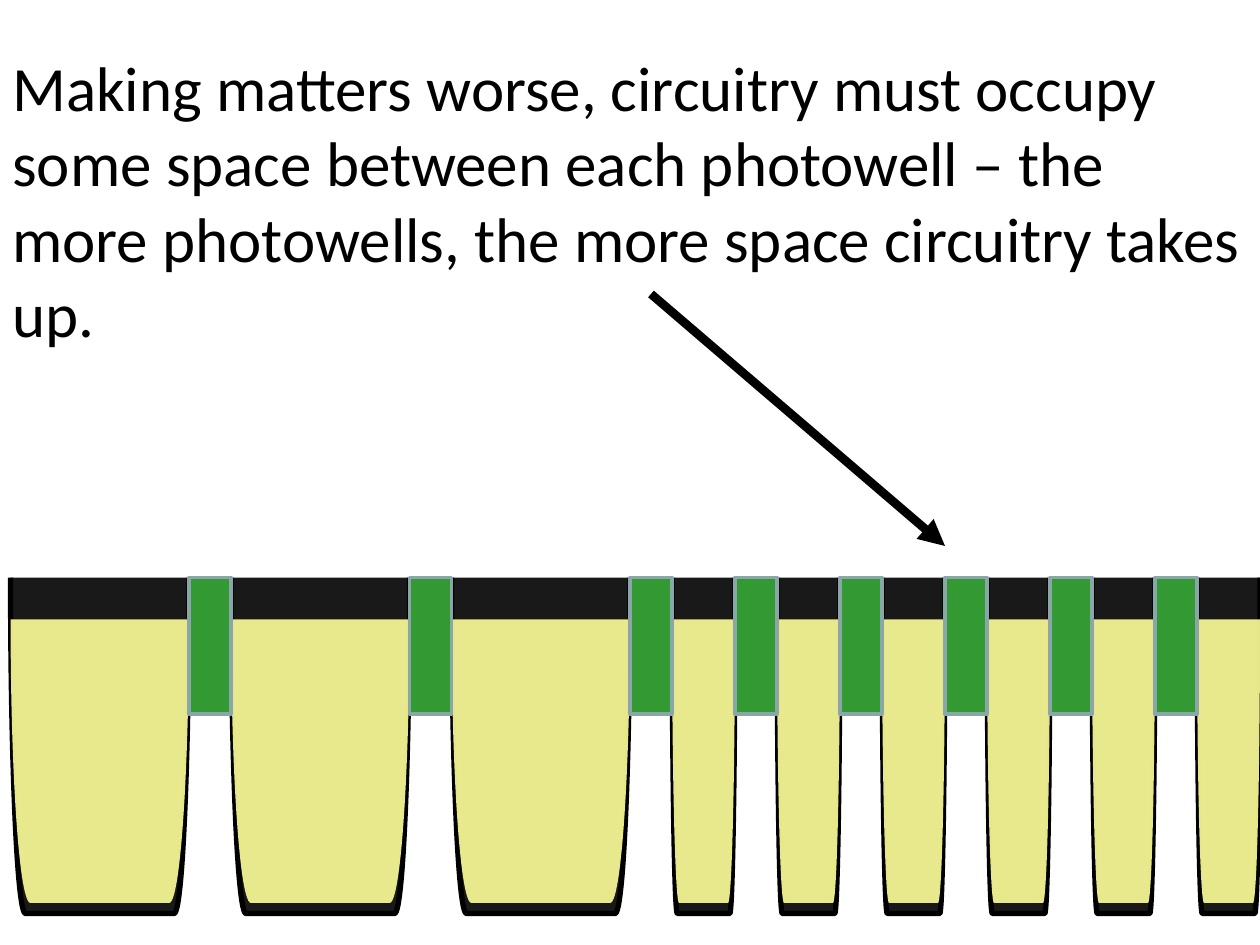
"""Build the slide on circuitry between photowells."""
from lxml.etree import SubElement as Sub
from pptx import Presentation
from pptx.dml.color import RGBColor
from pptx.enum.shapes import MSO_CONNECTOR as Conn, MSO_SHAPE as Kind
from pptx.enum.text import MSO_AUTO_SIZE as Fit
from pptx.oxml.ns import qn
from pptx.util import Pt

TEXT = ("Making matters worse, circuitry must occupy some space between each "
        "photowell – the more photowells, the more space circuitry takes up.")
FONT = {"name": "Calibri", "size": Pt(36)}
FRAME = {"word_wrap": True, "auto_size": Fit.SHAPE_TO_FIT_TEXT}
SIZES = [102] * 3 + [36] * 6
START, GAP = 6, 24
LAYERS = [
    {"top": 330, "depth": 192, "fill": "000000", "line": ("000000", 3), "bend": 0.083},
    {"top": 354, "depth": 162, "fill": "FFFF99", "line": None, "bend": 0.111},
]
CHIP = {"top": 330, "height": 78, "fill": "339933", "line": ("8AA6A8", 2)}
ARROW = (372, 168, 540, 312)


def paint(color, code):
    color.rgb = RGBColor.from_string(code)


def apply(item, values):
    for key, value in values.items():
        setattr(item, key, value)


def stroke(line, style):
    if style is None:
        line.fill.background()
        return
    code, width = style
    paint(line.color, code)
    line.width = Pt(width)


def add(slide, kind, box, fill, line):
    shape = slide.shapes.add_shape(kind, *map(Pt, box))
    shape.shadow.inherit = False
    shape.fill.solid()
    paint(shape.fill.fore_color, fill)
    stroke(shape.line, line)
    return shape


def add_well(slide, left, width, layer):
    depth = layer["depth"]
    mid_x, mid_y = left + width / 2, layer["top"] + depth / 2
    box = (mid_x - depth / 2, mid_y - width / 2, depth, width)
    well = add(slide, Kind.RIGHT_BRACKET, box, layer["fill"], layer["line"])
    well.rotation = 90
    well.adjustments[0] = layer["bend"]
    tint = well.fill._xPr.find(qn("a:solidFill"))[0]
    Sub(tint, qn("a:alpha"), val="90000")


def add_arrow(slide):
    arrow = slide.shapes.add_connector(Conn.STRAIGHT, *map(Pt, ARROW))
    stroke(arrow.line, ("000000", 5))
    Sub(arrow.line._get_or_add_ln(), qn("a:tailEnd"), type="triangle")
    Sub(arrow._element.spPr, qn("a:effectLst"))


def add_text(slide):
    frame = slide.shapes.add_textbox(Pt(0), Pt(24), Pt(720), Pt(138)).text_frame
    apply(frame, FRAME)
    run = frame.paragraphs[0].add_run()
    run.text = TEXT
    apply(run.font, FONT)
    paint(run.font.color, "000000")


def main():
    deck = Presentation()
    apply(deck, {"slide_width": Pt(720), "slide_height": Pt(540)})
    slide = deck.slides.add_slide(deck.slide_layouts[6])
    add_text(slide)
    lefts = [START + sum(SIZES[:i]) + GAP * i for i in range(len(SIZES))]
    wells = list(zip(lefts, SIZES))
    for left, width in wells:
        for layer in LAYERS:
            add_well(slide, left, width, layer)
    add_arrow(slide)
    for left, width in wells[:-1]:
        box = (left + width, CHIP["top"], GAP, CHIP["height"])
        add(slide, Kind.RECTANGLE, box, CHIP["fill"], CHIP["line"])
    deck.save("out.pptx")


if __name__ == "__main__":
    main()
